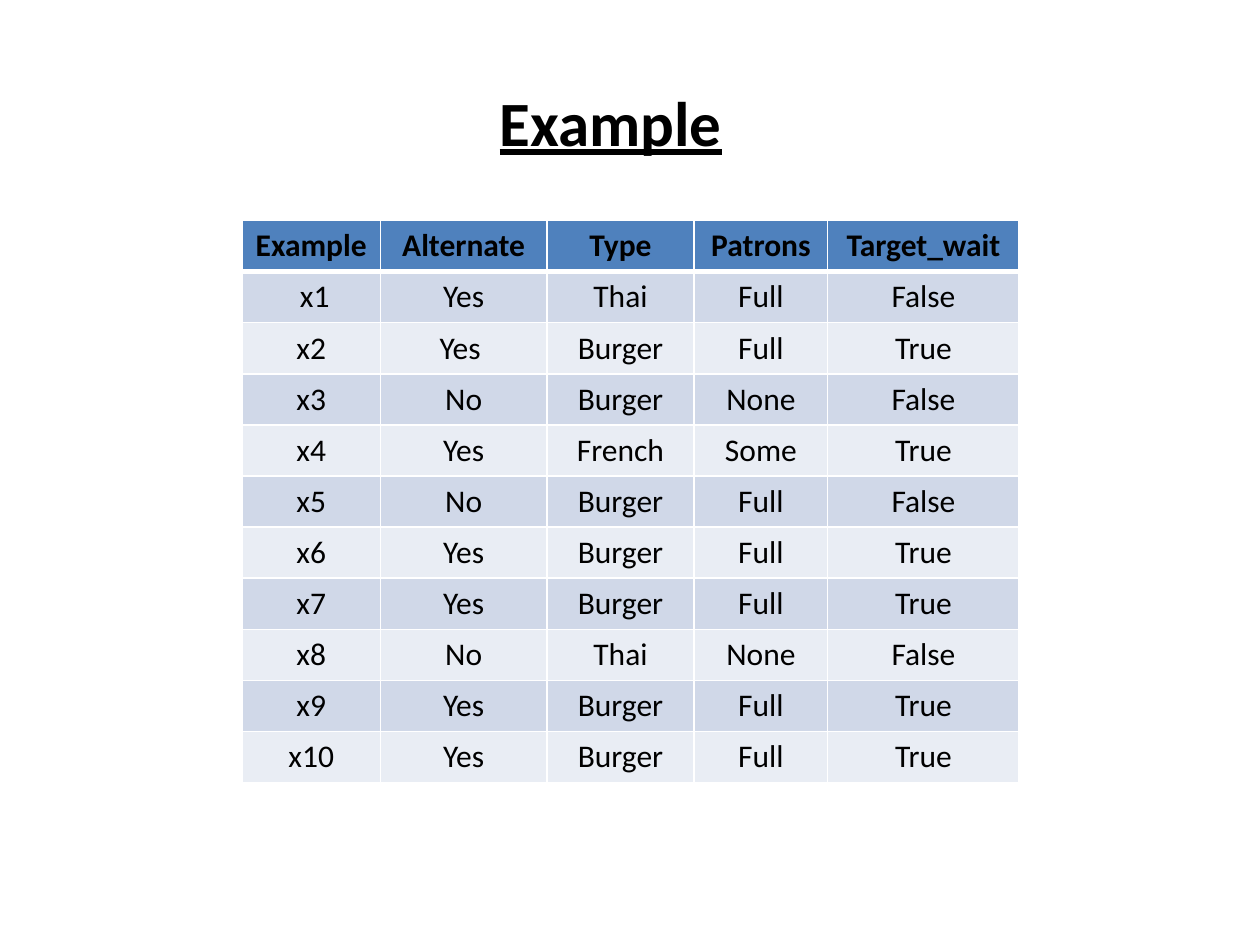
from dataclasses import dataclass

from lxml import etree
from pptx import Presentation
from pptx import util as u
from pptx.dml.color import RGBColor
from pptx.enum import text
from pptx.oxml import ns


@dataclass(frozen=True)
class Theme:
    font: str = "Calibri"
    ink: str = "000000"
    rule: str = "FFFFFF"
    header: str = "4F81BD"
    bands: tuple = ("D0D8E8", "E9EDF4")
    title_size: int = 36
    body_size: int = 18
    thin: int = 1
    thick: int = 3


HEADINGS = ["Example", "Alternate", "Type", "Patrons", "Target_wait"]
EXAMPLES = [
    [" x1", "Yes", "Thai", "Full", "False"],
    ["x2", "Yes ", "Burger", "Full", "True"],
    ["x3", "No", "Burger", "None", "False"],
    ["x4", "Yes", "French", "Some", "True"],
    ["x5", "No", "Burger", "Full", "False"],
    ["x6", "Yes", "Burger", "Full", "True"],
    ["x7", "Yes", "Burger", "Full", "True"],
    ["x8", "No", "Thai", "None", "False"],
    ["x9", "Yes", "Burger", "Full", "True"],
    ["x10", "Yes", "Burger", "Full", "True"],
]
COLUMN_WIDTHS = [1.1, 1.32, 1.17, 1.06, 1.52]
TABLE_HEIGHT = 4.43


class SlideBuilder:
    def __init__(self, slide, theme):
        self.slide = slide
        self.theme = theme

    def style(self, run, size, bold=False, underline=False):
        font = run.font
        font.name, font.size = self.theme.font, u.Pt(size)
        font.bold, font.underline = bold, underline
        font.color.rgb = RGBColor.from_string(self.theme.ink)

    def title(self, wording, left, top, width, height):
        box = self.slide.shapes.add_textbox(*map(u.Inches, (left, top, width, height)))
        frame = box.text_frame
        frame.word_wrap = True
        frame.text = wording
        line = frame.paragraphs[0]
        line.alignment = text.PP_ALIGN.CENTER
        self.style(line.runs[0], self.theme.title_size, bold=True, underline=True)
        tail = line.add_run()
        tail.text = " "
        self.style(tail, self.theme.body_size)

    def borders(self, cell, top, bottom):
        """Rule all four sides of a cell; top and bottom widths are in points."""
        thin = self.theme.thin
        properties = cell._tc.get_or_add_tcPr()
        sides = {"lnL": thin, "lnR": thin, "lnT": top, "lnB": bottom}
        for position, (side, width) in enumerate(sides.items()):
            line = etree.Element(ns.qn(f"a:{side}"), w=str(u.Pt(width)))
            fill = etree.SubElement(line, ns.qn("a:solidFill"))
            etree.SubElement(fill, ns.qn("a:srgbClr"), val=self.theme.rule)
            properties.insert(position, line)

    def table(self, rows, widths, left, top, height):
        theme = self.theme
        frame = self.slide.shapes.add_table(
            len(rows), len(widths),
            *map(u.Inches, (left, top, sum(widths), height)))
        table = frame.table
        for column, width in zip(table.columns, widths):
            column.width = u.Inches(width)
        for r, values in enumerate(rows):
            table.rows[r].height = u.Inches(height / len(rows))
            heading = r == 0
            color = theme.header if heading else theme.bands[(r - 1) % 2]
            for c, value in enumerate(values):
                cell = table.cell(r, c)
                cell.text_frame.text = value
                line = cell.text_frame.paragraphs[0]
                line.alignment = text.PP_ALIGN.CENTER
                self.style(line.runs[0], theme.body_size, bold=heading)
                cell.fill.solid()
                cell.fill.fore_color.rgb = RGBColor.from_string(color)
                self.borders(cell,
                             top=theme.thick if r == 1 else theme.thin,
                             bottom=theme.thick if heading else theme.thin)


def main():
    deck = Presentation()
    deck.slide_width, deck.slide_height = u.Inches(10), u.Inches(7.5)
    builder = SlideBuilder(deck.slides.add_slide(deck.slide_layouts[6]), Theme())
    builder.table([HEADINGS, *EXAMPLES], COLUMN_WIDTHS, 1.92, 1.75, TABLE_HEIGHT)
    builder.title("Example", 2.5, 0.61, 4.75, 0.71)
    deck.save("out.pptx")


if __name__ == "__main__":
    main()
